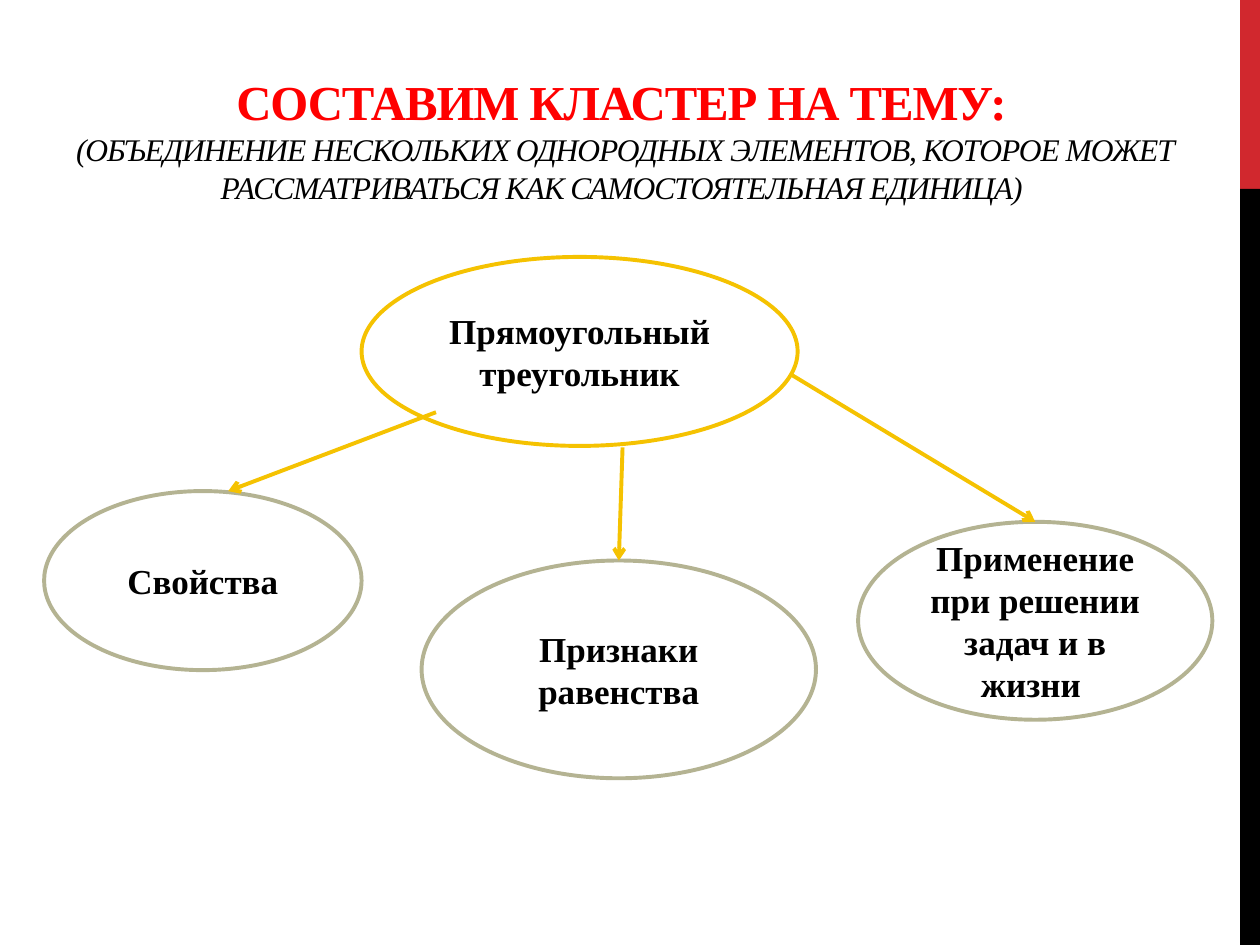
from dataclasses import dataclass
from typing import Optional

from lxml.etree import SubElement
from pptx import Presentation
from pptx.dml.color import RGBColor
from pptx.enum.shapes import MSO_CONNECTOR, MSO_SHAPE
from pptx.enum.text import MSO_ANCHOR, PP_ALIGN
from pptx.oxml.ns import qn
from pptx.util import Cm, Pt


@dataclass(frozen=True)
class Theme:
    font: str = "Times New Roman"
    heading: RGBColor = RGBColor(0xFF, 0x00, 0x00)
    ink: RGBColor = RGBColor(0x00, 0x00, 0x00)
    paper: RGBColor = RGBColor(0xFF, 0xFF, 0xFF)
    accent: RGBColor = RGBColor(0xD1, 0x28, 0x2E)
    gold: RGBColor = RGBColor(0xF5, 0xC2, 0x01)
    olive: RGBColor = RGBColor(0xB4, 0xB3, 0x92)
    heading_size: float = 27.9
    definition_size: float = 18
    idea_size: float = 20
    stroke: float = 2.25
    tracking: int = -60


@dataclass(frozen=True)
class Idea:
    text: str
    left: float
    top: float
    width: float
    height: float
    outline: RGBColor


@dataclass(frozen=True)
class Branch:
    start: tuple[float, float]
    idea: Idea
    end: Optional[tuple[float, float]] = None


THEME = Theme()

TOPIC = Idea("Прямоугольный треугольник", 7.29, 5.18, 8.79, 3.81, THEME.gold)
PROPERTIES = Idea("Свойства", 0.89, 9.9, 6.4, 3.61, THEME.olive)
CRITERIA = Idea("Признаки равенства", 8.5, 11.3, 7.95, 4.39, THEME.olive)
USES = Idea("Применение при решении задач и в жизни ", 17.3, 10.52, 7.14, 3.99, THEME.olive)

BRANCHES = [
    Branch((8.79, 8.31), PROPERTIES, (4.6, 9.9)),
    Branch((12.55, 9.02), CRITERIA),
    Branch((15.93, 7.54), USES),
]


def add_text(paragraph, text: str, size: float, color: RGBColor,
             bold: bool = False, italic: bool = False):
    run = paragraph.add_run()
    run.text = text
    run.font.name = THEME.font
    run.font.size = Pt(size)
    run.font.color.rgb = color
    run.font.bold = bold
    run.font.italic = italic
    return run


def draw_band(slide, top: float, height: float, color: RGBColor) -> None:
    band = slide.shapes.add_shape(MSO_SHAPE.RECTANGLE, Cm(25), Cm(top), Cm(0.4), Cm(height))
    band.shadow.inherit = False
    band.fill.solid()
    band.fill.fore_color.rgb = color
    band.line.fill.background()


def draw_title(slide) -> None:
    title = slide.shapes.add_textbox(Cm(1.1), Cm(1.12), Cm(22.86), Cm(3.15))
    frame = title.text_frame
    frame.word_wrap = True
    frame.vertical_anchor = MSO_ANCHOR.BOTTOM
    frame.margin_left = frame.margin_right = Cm(0.1)
    paragraph = frame.paragraphs[0]
    paragraph.alignment = PP_ALIGN.CENTER
    heading = add_text(paragraph, "СОСТАВИМ КЛАСТЕР НА ТЕМУ:",
                       THEME.heading_size, THEME.heading, bold=True)
    paragraph.add_line_break()
    definition = add_text(
        paragraph,
        " (ОБЪЕДИНЕНИЕ НЕСКОЛЬКИХ ОДНОРОДНЫХ ЭЛЕМЕНТОВ, КОТОРОЕ МОЖЕТ "
        "РАССМАТРИВАТЬСЯ КАК САМОСТОЯТЕЛЬНАЯ ЕДИНИЦА)",
        THEME.definition_size, THEME.ink, italic=True)
    for run in (heading, definition):
        run.font._element.set("spc", str(THEME.tracking))


def draw_idea(slide, idea: Idea):
    oval = slide.shapes.add_shape(MSO_SHAPE.OVAL, Cm(idea.left), Cm(idea.top),
                                  Cm(idea.width), Cm(idea.height))
    oval.shadow.inherit = False
    oval.fill.solid()
    oval.fill.fore_color.rgb = THEME.paper
    oval.line.color.rgb = idea.outline
    oval.line.width = Pt(THEME.stroke)
    frame = oval.text_frame
    frame.word_wrap = True
    frame.vertical_anchor = MSO_ANCHOR.MIDDLE
    paragraph = frame.paragraphs[0]
    paragraph.alignment = PP_ALIGN.CENTER
    add_text(paragraph, idea.text, THEME.idea_size, THEME.ink, bold=True)
    return oval


def draw_branch(slide, branch: Branch, oval) -> None:
    idea = branch.idea
    end = branch.end or (idea.left + idea.width / 2, idea.top)
    arrow = slide.shapes.add_connector(MSO_CONNECTOR.STRAIGHT,
                                       *map(Cm, branch.start), *map(Cm, end))
    if branch.end is None:
        arrow.end_connect(oval, 0)
    arrow.line.color.rgb = THEME.gold
    arrow.line.width = Pt(THEME.stroke)
    SubElement(arrow.line._get_or_add_ln(), qn("a:tailEnd"), type="arrow")
    SubElement(arrow._element.spPr, qn("a:effectLst"))


def main() -> None:
    deck = Presentation()
    deck.slide_width, deck.slide_height = Cm(25.4), Cm(19.05)
    slide = deck.slides.add_slide(deck.slide_layouts[6])
    draw_band(slide, 0, 3.81, THEME.accent)
    draw_band(slide, 3.81, 15.24, THEME.ink)
    draw_title(slide)
    draw_idea(slide, TOPIC)
    ovals = [draw_idea(slide, branch.idea) for branch in BRANCHES]
    for branch, oval in zip(BRANCHES, ovals):
        draw_branch(slide, branch, oval)
    deck.save("out.pptx")


if __name__ == "__main__":
    main()
